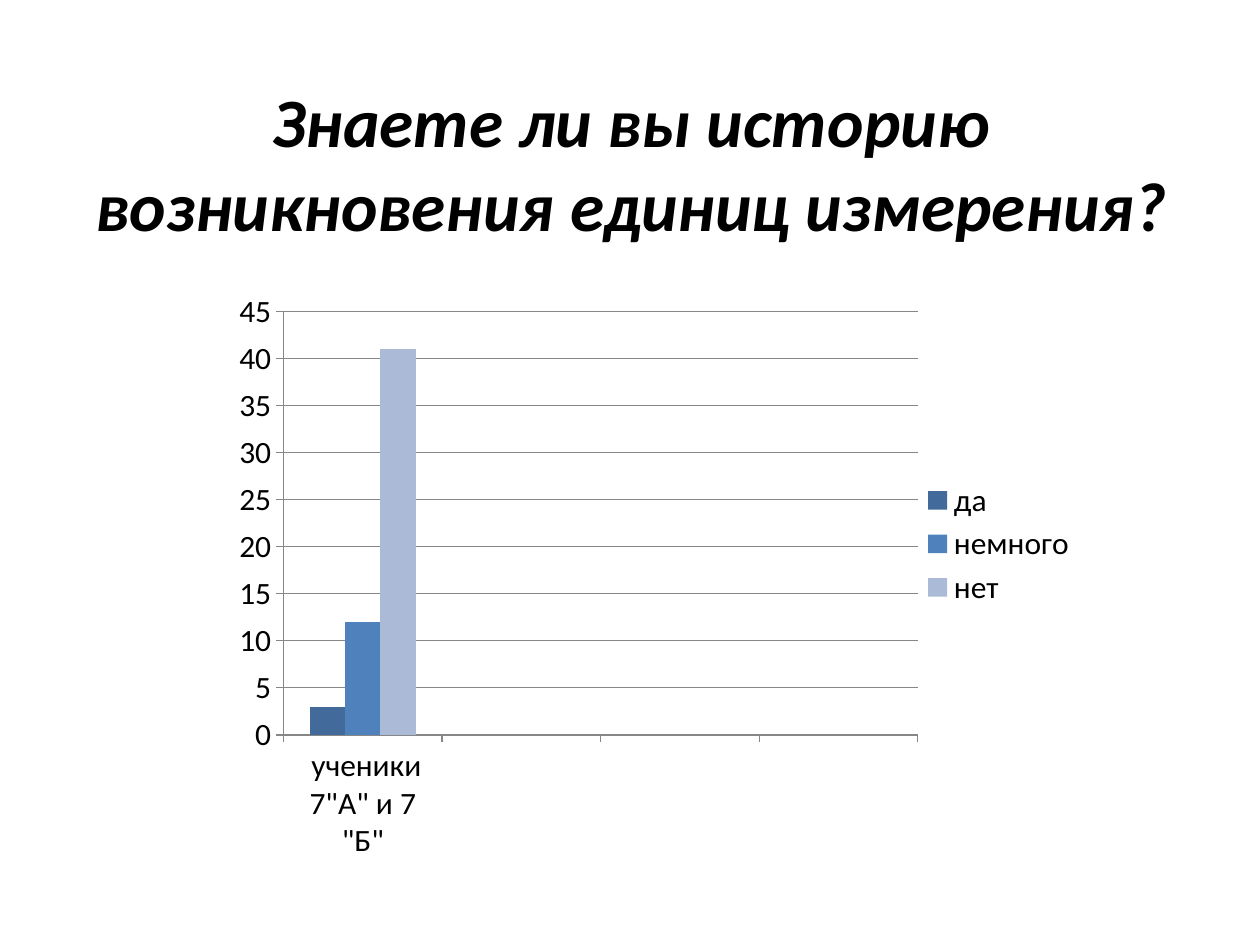
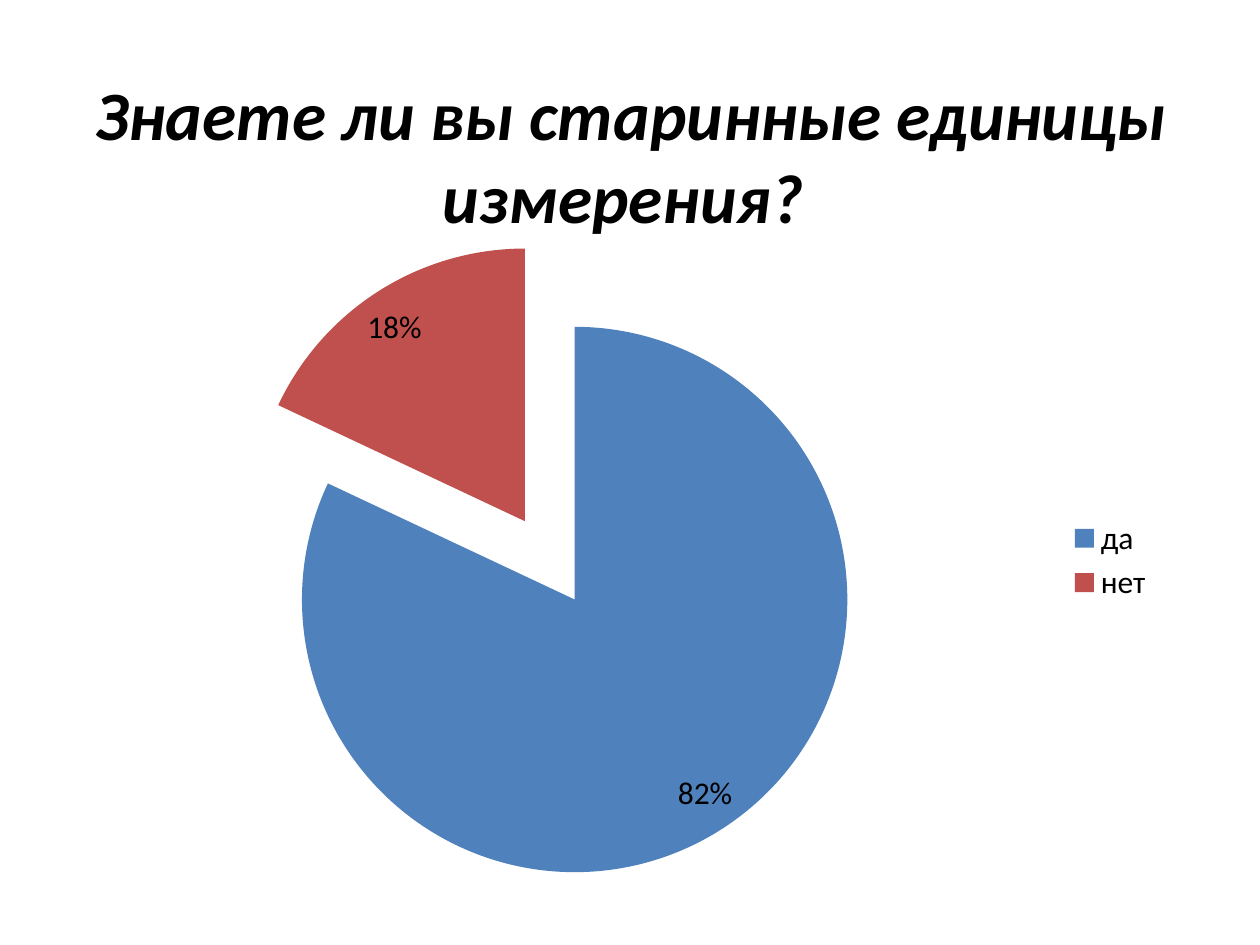
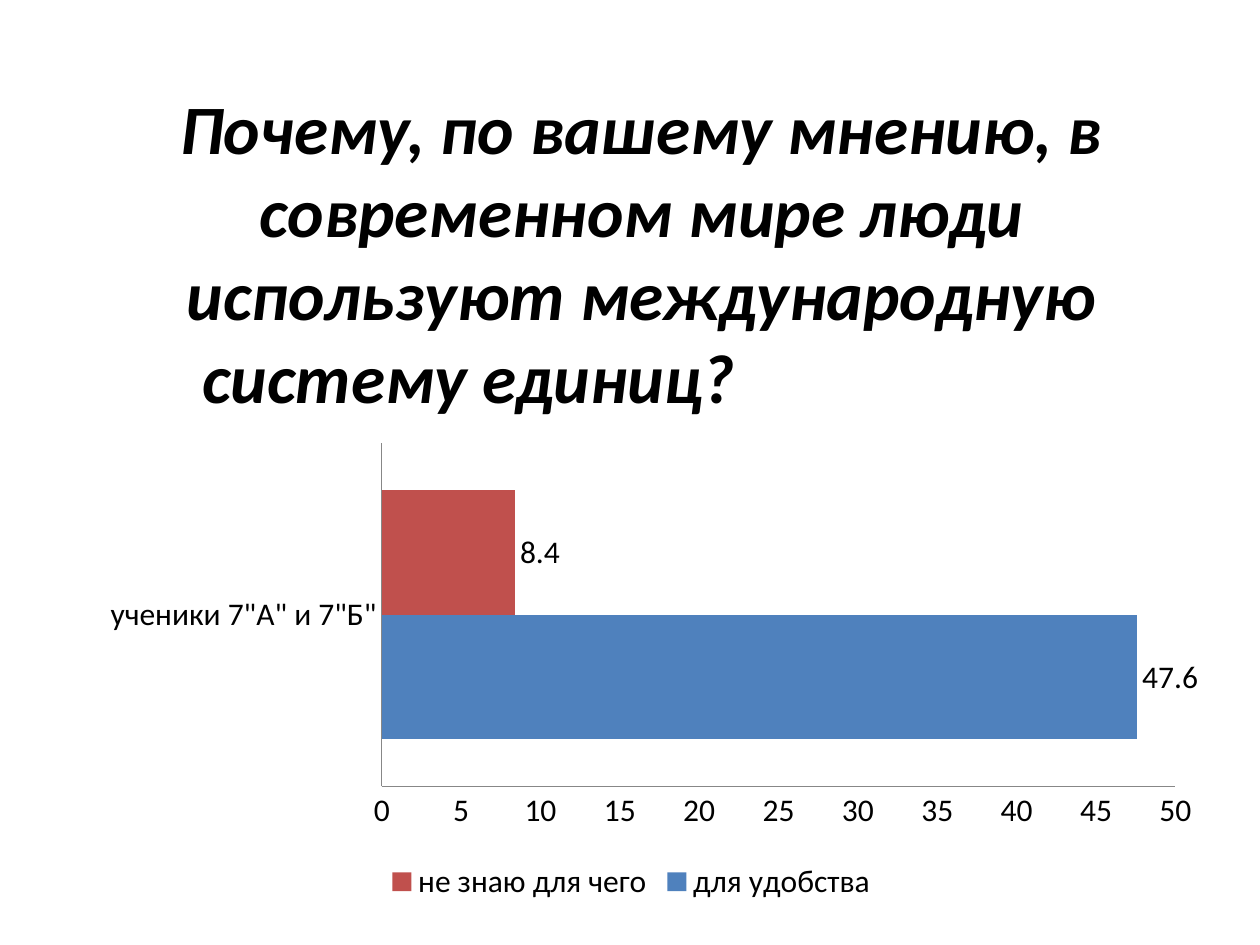
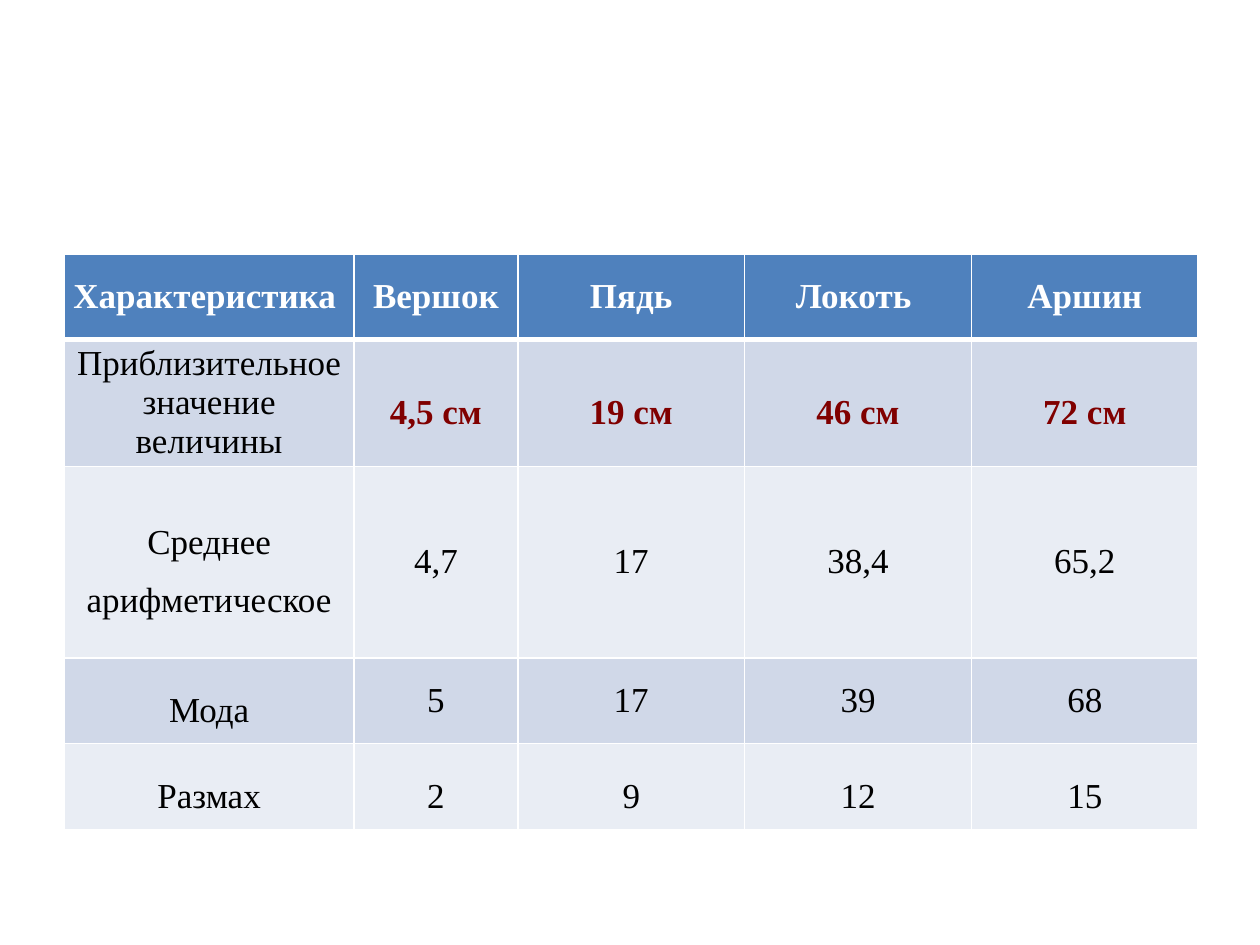
from lxml.etree import SubElement
from pptx import Presentation
from pptx.chart.data import CategoryChartData
from pptx.dml.color import RGBColor
from pptx.enum.chart import XL_CHART_TYPE, XL_LABEL_POSITION, XL_LEGEND_POSITION, XL_TICK_MARK
from pptx.enum.text import MSO_ANCHOR, PP_ALIGN
from pptx.oxml import parse_xml
from pptx.oxml.ns import nsdecls, qn
from pptx.util import Pt

COLORS = {
    "text": "000000",
    "white": "FFFFFF",
    "blue": "4F81BD",
    "dark_blue": "426A9A",
    "pale_blue": "AABAD7",
    "red": "C0504D",
    "axis": "878787",
    "band_dark": "D0D8E8",
    "band_light": "E9EDF4",
    "measure": "800000",
}
CHART_FONT = "Calibri"
TABLE_FONT = "Times New Roman"
TITLE_SIZE = 39.6
TITLE_LINE = 48


def rgb(name):
    return RGBColor.from_string(COLORS[name])


def style_font(font, name, size, color, bold=False, italic=False):
    font.name, font.size = name, Pt(size)
    font.bold, font.italic = bold, italic
    font.color.rgb = rgb(color)


def add_slide(prs):
    return prs.slides.add_slide(prs.slide_layouts[6])


def add_title(slide, left, top, text, lines_below=0, last_line=None, last_indent=0):
    """Bold italic question, raised by the room kept for lines below it."""
    frame = slide.shapes.add_textbox(Pt(left), Pt(top), Pt(648), Pt(90)).text_frame
    frame.word_wrap = True
    frame.vertical_anchor = MSO_ANCHOR.MIDDLE
    frame.margin_bottom = Pt(3.6 + lines_below * TITLE_LINE)
    question = frame.paragraphs[0]
    question.text = text
    question.alignment = PP_ALIGN.CENTER
    if last_line:
        ending = frame.add_paragraph()
        ending.text = last_line
        ending.alignment = PP_ALIGN.LEFT
        ending._p.get_or_add_pPr().set("marL", str(Pt(last_indent)))
    for paragraph in frame.paragraphs:
        style_font(paragraph.font, CHART_FONT, TITLE_SIZE, "text", True, True)


def add_chart(slide, kind, box, categories, series, legend_position):
    """Chart with shared font and legend; series maps names to values."""
    data = CategoryChartData()
    data.categories = categories
    for name, values in series.items():
        data.add_series(name, values)
    chart = slide.shapes.add_chart(kind, *map(Pt, box), data).chart
    chart.has_title = False
    style_font(chart.font, CHART_FONT, 18, "text")
    chart.has_legend = True
    chart.legend.position = legend_position
    chart.legend.include_in_layout = False
    return chart


def paint(element, color):
    element.format.fill.solid()
    element.format.fill.fore_color.rgb = rgb(color)


def style_bars(chart, colors, gap, tick, gridlines):
    plot = chart.plots[0]
    plot.gap_width = gap
    plot.vary_by_categories = False
    for series, color in zip(plot.series, colors):
        paint(series, color)
        series.invert_if_negative = False
    for axis in (chart.category_axis, chart.value_axis):
        axis.major_tick_mark = tick
        axis.minor_tick_mark = XL_TICK_MARK.NONE
        axis.format.line.color.rgb = rgb("axis")
    chart.value_axis.has_major_gridlines = gridlines
    if gridlines:
        chart.value_axis.major_gridlines.format.line.color.rgb = rgb("axis")


def manual_layout(parent, index, **parts):
    """Fix the place of a chart part, in fractions of the chart."""
    for old in parent.findall(qn("c:layout")):
        parent.remove(old)
    layout = parse_xml(f"<c:layout {nsdecls('c')}><c:manualLayout/></c:layout>")
    for tag, value in parts.items():
        SubElement(layout[0], qn("c:" + tag)).set("val", str(value))
    parent.insert(index, layout)


def place_plot(chart, x, y, w, h):
    area = chart._chartSpace.find(".//" + qn("c:plotArea"))
    manual_layout(area, 0, layoutTarget="inner", xMode="edge", yMode="edge",
                  x=x, y=y, w=w, h=h)


def place_legend(chart, x, y):
    legend = chart._chartSpace.find(".//" + qn("c:legend"))
    manual_layout(legend, 1, xMode="edge", yMode="edge", x=x, y=y)


def explode_pie(series, percent):
    first_point = series._element.find(qn("c:dPt"))
    first_point.addprevious(parse_xml(f'<c:explosion {nsdecls("c")} val="{percent}"/>'))


def add_border(cell, side, width):
    line = SubElement(cell._tc.get_or_add_tcPr(), qn("a:ln" + side), w=str(Pt(width)))
    fill = SubElement(line, qn("a:solidFill"))
    SubElement(fill, qn("a:srgbClr"), val=COLORS["white"])


def fill_cell(cell, text, fill, color, bold, spacing, bottom):
    for side, width in (("L", 1), ("R", 1), ("T", 1), ("B", bottom)):
        add_border(cell, side, width)
    cell.fill.solid()
    cell.fill.fore_color.rgb = rgb(fill)
    cell.vertical_anchor = MSO_ANCHOR.MIDDLE
    cell.margin_left = cell.margin_right = Pt(5)
    cell.margin_top = cell.margin_bottom = 0
    paragraph = cell.text_frame.paragraphs[0]
    paragraph.text = text
    paragraph.alignment = PP_ALIGN.CENTER
    paragraph.line_spacing = spacing
    style_font(paragraph.font, TABLE_FONT, 20, color, bold)


def add_measures_table(slide, left, top, widths, heights, rows):
    """Each row: texts, value colour, bold values, label spacing, value spacing."""
    shape = slide.shapes.add_table(len(rows), len(widths), Pt(left), Pt(top),
                                   Pt(sum(widths)), Pt(sum(heights)))
    table = shape.table
    table.first_row = table.horz_banding = False
    for column, width in zip(table.columns, widths):
        column.width = Pt(width)
    for r, (texts, color, bold, label_spacing, value_spacing) in enumerate(rows):
        table.rows[r].height = Pt(heights[r])
        header = r == 0
        fill = "blue" if header else ("band_light", "band_dark")[r % 2]
        for c, text in enumerate(texts):
            label = c == 0 and not header
            fill_cell(table.cell(r, c), text, fill,
                      "text" if label else color,
                      bold and not label,
                      label_spacing if c == 0 else value_spacing,
                      bottom=3 if header else 1)


def history_slide(prs):
    slide = add_slide(prs)
    add_title(slide, 36.7, 71.5, "Знаете ли вы историю возникновения единиц измерения?",
              lines_below=1)
    answers = {"да": 3, "немного": 12, "нет": 41}
    # Three empty places stay free to the right of the only group
    chart = add_chart(slide, XL_CHART_TYPE.COLUMN_CLUSTERED, (111, 162, 510.5, 329),
                      [' ученики 7"А" и 7 "Б"'],
                      {name: (value, None, None, None) for name, value in answers.items()},
                      XL_LEGEND_POSITION.RIGHT)
    style_bars(chart, ("dark_blue", "blue", "pale_blue"), 150, XL_TICK_MARK.OUTSIDE, True)
    place_plot(chart, 0.1, 0.05, 0.71, 0.75)
    place_legend(chart, 0.81, 0.34)


def old_units_slide(prs):
    slide = add_slide(prs)
    add_title(slide, 36.7, 43, "Знаете ли вы старинные единицы измерения? ")
    chart = add_chart(slide, XL_CHART_TYPE.PIE, (20, 128, 646.5, 384.5),
                      ["да", "нет"], {"Series 1": (82, 18)}, XL_LEGEND_POSITION.RIGHT)
    plot = chart.plots[0]
    plot.vary_by_categories = True
    answers = plot.series[0]
    for index, color in enumerate(("blue", "red")):
        paint(answers.points[index], color)
    explode_pie(answers, 17)
    labels = answers.data_labels
    labels.show_percentage, labels.show_value = True, False
    labels.number_format, labels.number_format_is_linked = "0%", False
    labels.position = XL_LABEL_POSITION.BEST_FIT


def si_slide(prs):
    slide = add_slide(prs)
    add_title(slide, 42.5, 122.5,
              "Почему, по вашему мнению, в современном мире люди используют международную",
              lines_below=1, last_line="систему единиц?", last_indent=66)
    chart = add_chart(slide, XL_CHART_TYPE.BAR_CLUSTERED, (36.7, 252.7, 648, 265.7),
                      ['ученики 7"А" и 7"Б"'],
                      {"для удобства": (47.6,), "не знаю для чего": (8.4,)},
                      XL_LEGEND_POSITION.BOTTOM)
    style_bars(chart, ("blue", "red"), 75, XL_TICK_MARK.NONE, False)
    place_plot(chart, 0.28, 0, 0.7, 0.74)
    for series in chart.plots[0].series:
        series.data_labels.show_value = True
        series.data_labels.position = XL_LABEL_POSITION.OUTSIDE_END


def measures_slide(prs):
    slide = add_slide(prs)
    rows = [
        (("Характеристика ", "Вершок", "Пядь", "Локоть ", "Аршин"), "white", True, 1, 1),
        (("Приблизительное значение величины", "4,5 см", "19 см", "46 см", "72 см"),
         "measure", True, 1, 1.5),
        (("Среднее арифметическое", "4,7", "17", "38,4", "65,2"), "text", False, 1.5, 1),
        (("Мода", "5", "17", "39", "68"), "text", False, 1.5, 1),
        (("Размах", "2", "9", "12", "15"), "text", False, 1.5, 1.5),
    ]
    # Two layers of the table, slightly shifted
    for left in (36, 36.7):
        add_measures_table(slide, left, 145.5,
                           widths=[165.6, 93.6] + [129.6] * 3,
                           heights=[48.5, 72.5, 109.5, 49, 49], rows=rows)


def main():
    prs = Presentation()
    prs.slide_width, prs.slide_height = Pt(720), Pt(540)
    history_slide(prs)
    old_units_slide(prs)
    si_slide(prs)
    measures_slide(prs)
    prs.save("out.pptx")


if __name__ == "__main__":
    main()
